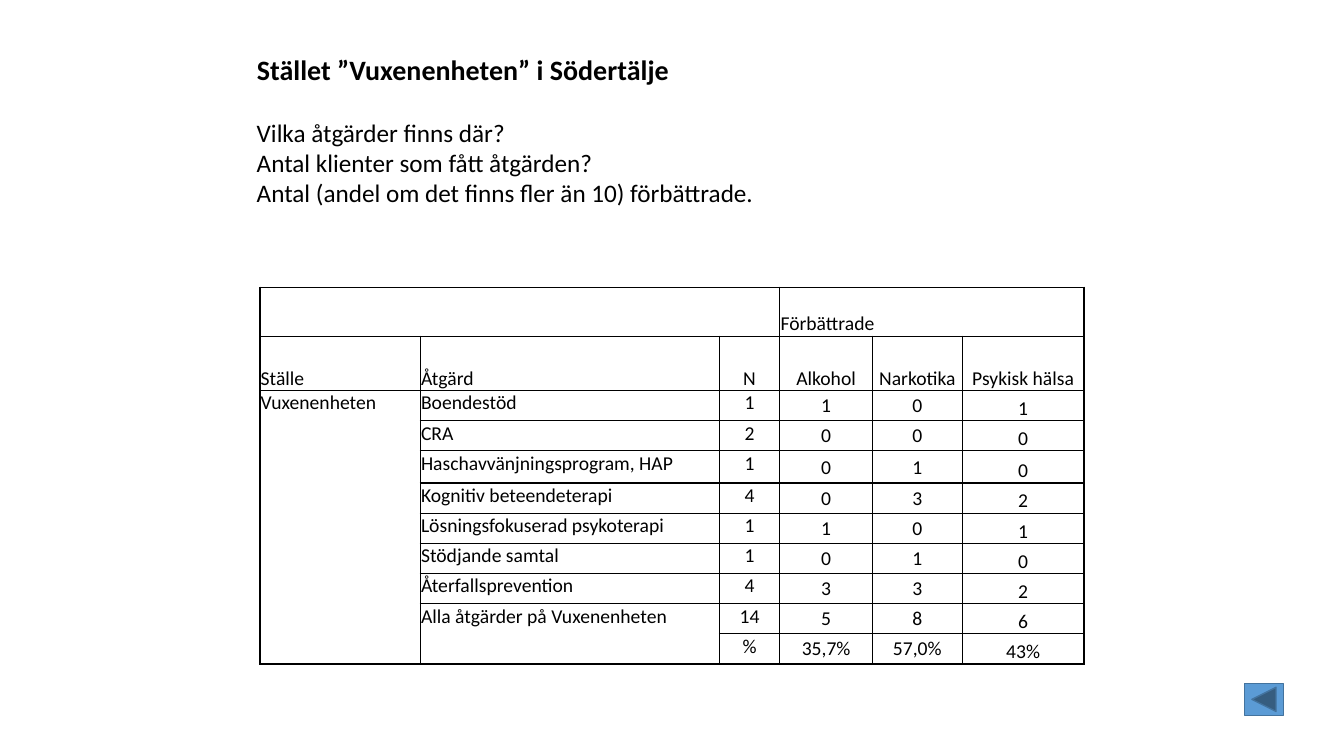
import pptx
import pptx.dml.color
import pptx.enum.shapes
import pptx.enum.text
import pptx.oxml
import pptx.oxml.ns
import pptx.util

Cm = pptx.util.Cm
Pt = pptx.util.Pt
ALIGN = pptx.enum.text.PP_ALIGN
ANCHOR = pptx.enum.text.MSO_ANCHOR

FONT = "Calibri"
BLACK = "000000"
HEADING = "Stället ”Vuxenenheten” i Södertälje"
QUESTIONS = [
    "Vilka åtgärder finns där?",
    "Antal klienter som fått åtgärden?",
    "Antal (andel om det finns fler än 10) förbättrade.",
]
ROWS = [
    ("", "", "", "Förbättrade", "", ""),
    ("Ställe", "Åtgärd", "N", "Alkohol", "Narkotika", "Psykisk hälsa"),
    ("Vuxenenheten", "Boendestöd", "1", "1", "0", "1"),
    ("", "CRA", "2", "0", "0", "0"),
    ("", "Haschavvänjningsprogram, HAP", "1", "0", "1", "0"),
    ("", "Kognitiv beteendeterapi", "4", "0", "3", "2"),
    ("", "Lösningsfokuserad psykoterapi", "1", "1", "0", "1"),
    ("", "Stödjande samtal", "1", "0", "1", "0"),
    ("", "Återfallsprevention", "4", "3", "3", "2"),
    ("", "Alla åtgärder på Vuxenenheten", "14", "5", "8", "6"),
    ("", "", "%", "35,7%", "57,0%", "43%"),
]
HEADER_ROWS = 2
MERGES = [((0, 0), (0, 2)), ((0, 3), (0, 5)), ((2, 0), (10, 0)), ((9, 1), (10, 1))]
COLUMN_WIDTHS = [4.04, 7.54, 1.52, 2.34, 2.26, 3.07]
ROW_HEIGHTS = [1.23, 1.37, 0.76, 0.76, 0.81] + [0.76] * 6
BODY_ANCHORS = [ANCHOR.TOP] * 3 + [ANCHOR.MIDDLE] * 2 + [ANCHOR.BOTTOM]
CELL_MARGINS = {"margin_left": Cm(0.02), "margin_right": Cm(0.02),
                "margin_top": Cm(0.02), "margin_bottom": 0}


def color(value):
    return pptx.dml.color.RGBColor.from_string(value)


def write(paragraph, text, size, bold=False, alignment=ALIGN.LEFT):
    paragraph.alignment = alignment
    run = paragraph.add_run()
    run.text = text
    for name, value in {"name": FONT, "size": Pt(size), "bold": bold}.items():
        setattr(run.font, name, value)
    run.font.color.rgb = color(BLACK)


def place(shape, left, top, width, height):
    for name, value in {"left": left, "top": top, "width": width, "height": height}.items():
        setattr(shape, name, Cm(value))


def add_borders(cell):
    properties = cell._tc.get_or_add_tcPr()
    for index, side in enumerate(["lnL", "lnR", "lnT", "lnB"]):
        properties.insert(index, pptx.oxml.parse_xml(
            f'<a:{side} {pptx.oxml.ns.nsdecls("a")} w="{Pt(1)}"><a:solidFill>'
            f'<a:srgbClr val="{BLACK}"/></a:solidFill></a:{side}>'))


def add_heading(slide):
    title = slide.shapes.title
    place(title, 6.22, 1.19, 13.2, 1.12)
    frame = title.text_frame
    frame.auto_size = pptx.enum.text.MSO_AUTO_SIZE.NONE
    frame.vertical_anchor = ANCHOR.TOP
    write(frame.paragraphs[0], HEADING, 20, bold=True)


def add_questions(slide):
    box = slide.shapes.add_textbox(Cm(6.22), Cm(2.83), Cm(13.2), Cm(2.54))
    frame = box.text_frame
    frame.word_wrap = False
    for index, question in enumerate(QUESTIONS):
        paragraph = frame.add_paragraph() if index else frame.paragraphs[0]
        write(paragraph, question, 18)


def add_results_table(slide):
    table = slide.shapes.add_table(
        len(ROWS), len(COLUMN_WIDTHS), Cm(6.55), Cm(7.24),
        Cm(sum(COLUMN_WIDTHS)), Cm(sum(ROW_HEIGHTS))).table
    table.first_row = table.horz_banding = False
    for column, width in zip(table.columns, COLUMN_WIDTHS):
        column.width = Cm(width)
    for row, height in zip(table.rows, ROW_HEIGHTS):
        row.height = Cm(height)
    for row_index, texts in enumerate(ROWS):
        for column_index, text in enumerate(texts):
            cell = table.cell(row_index, column_index)
            for name, value in CELL_MARGINS.items():
                setattr(cell, name, value)
            is_header = row_index < HEADER_ROWS
            cell.vertical_anchor = ANCHOR.BOTTOM if is_header else BODY_ANCHORS[column_index]
            cell.fill.background()
            add_borders(cell)
            if text:
                centered = row_index > 0 and column_index > 1
                write(cell.text_frame.paragraphs[0], text, 14,
                      alignment=ALIGN.CENTER if centered else ALIGN.LEFT)
    for first, last in MERGES:
        table.cell(*first).merge(table.cell(*last))


def add_back_button(slide):
    button = slide.shapes.add_shape(
        pptx.enum.shapes.MSO_SHAPE.ACTION_BUTTON_BACK_OR_PREVIOUS,
        Cm(31.37), Cm(17.22), Cm(0.97), Cm(0.81))
    button.shadow.inherit = False
    button.fill.solid()
    button.fill.fore_color.rgb = color("5B9BD5")
    button.line.color.rgb = color("43739E")
    button.line.width = Pt(1)


def main():
    presentation = pptx.Presentation()
    presentation.slide_width = Cm(33.87)
    presentation.slide_height = Cm(19.05)
    slide = presentation.slides.add_slide(presentation.slide_layouts[5])
    add_heading(slide)
    add_questions(slide)
    add_results_table(slide)
    add_back_button(slide)
    presentation.save("out.pptx")


if __name__ == "__main__":
    main()
